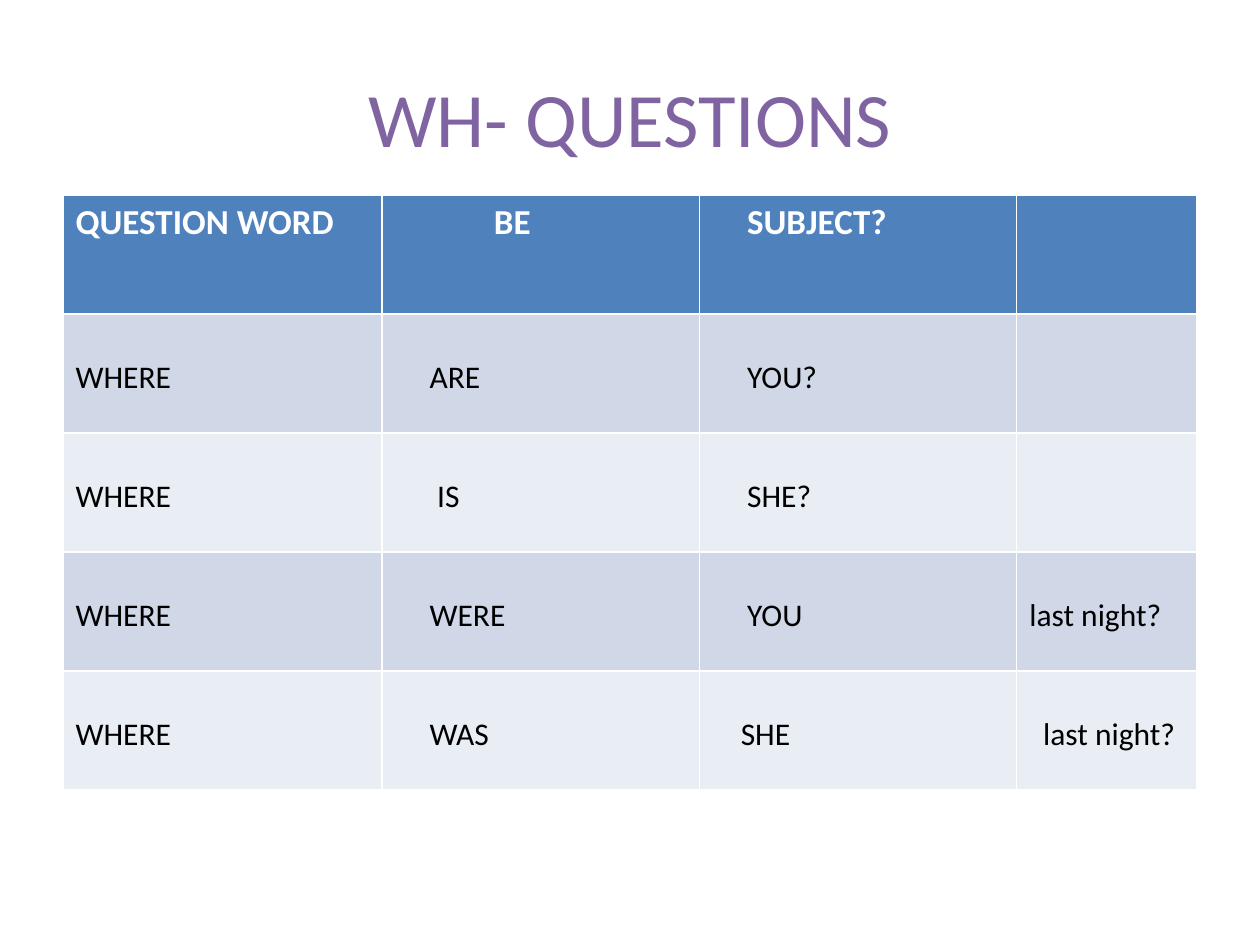
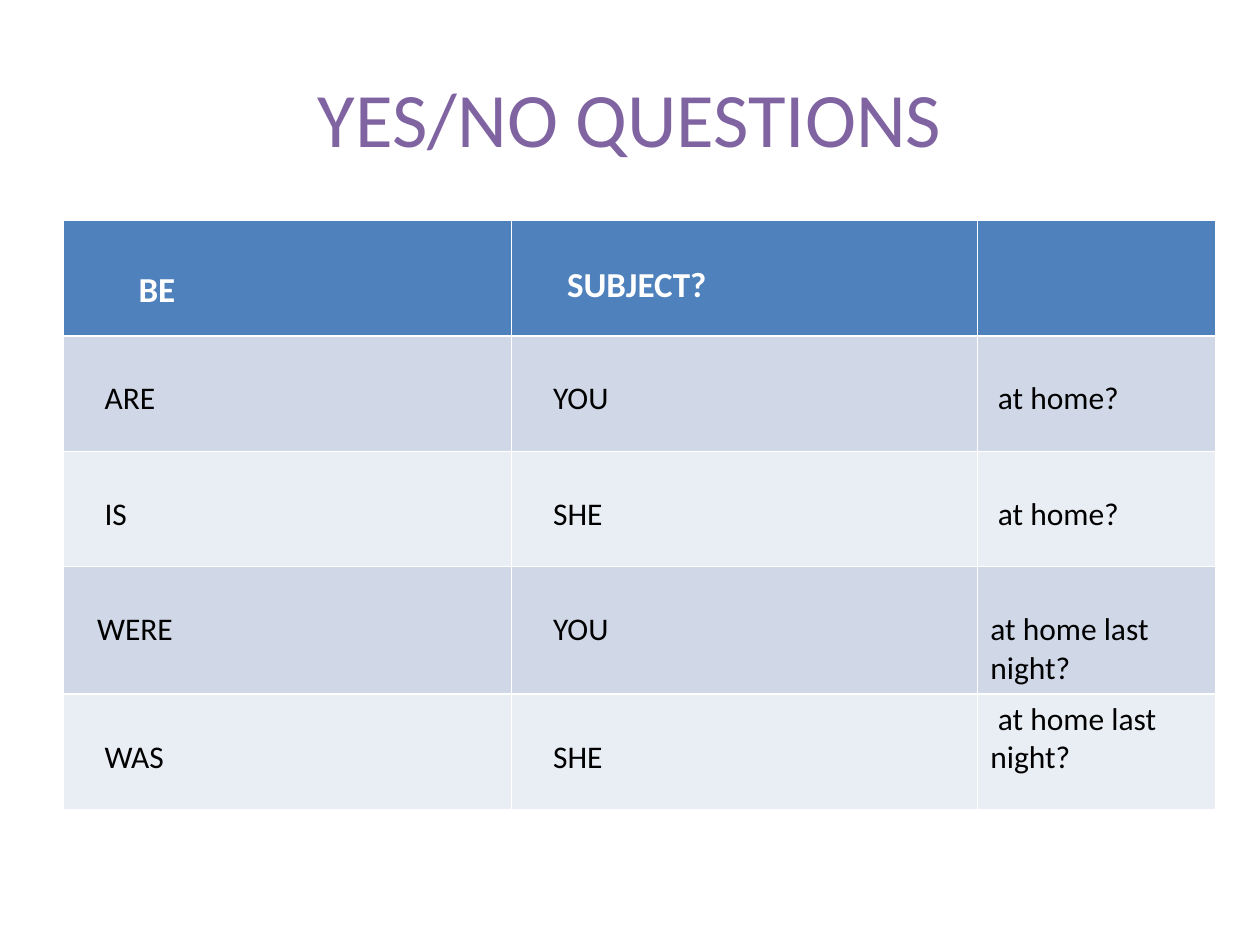
from dataclasses import dataclass

from pptx import Presentation
from pptx.dml.color import RGBColor
from pptx.enum import text
from pptx.util import Inches, Pt


@dataclass(frozen=True)
class Theme:
    font: str = "Calibri"
    title: RGBColor = RGBColor(0x80, 0x64, 0xA2)
    header_fill: RGBColor = RGBColor(0x4F, 0x81, 0xBD)
    header_text: RGBColor = RGBColor(0xFF, 0xFF, 0xFF)
    bands: tuple = (RGBColor(0xD0, 0xD8, 0xE8), RGBColor(0xE9, 0xED, 0xF4))
    body_text: RGBColor = RGBColor(0, 0, 0)
    title_size: Pt = Pt(44)
    header_size: Pt = Pt(20)
    body_size: Pt = Pt(18)


THEME = Theme()
LEFT = 0.5
CELL_TOP = 0.05
BODY_DROP = 0.3  # body text sits one line below the top of its cell

# Each cell is (wording, first-line indent, optional drop from the cell top).
EMPTY = ("", 0)
lessons = [
    {
        "title": "WH- QUESTIONS",
        "top": 1.55,
        "row_height": 4.72 / 5,
        "columns": (2.53, 2.52, 2.52, 1.43),
        "rows": [
            [("QUESTION WORD", 0), ("BE", 0.79), ("SUBJECT?", 0.28), EMPTY],
            [("WHERE", 0), ("ARE", 0.28), ("YOU?", 0.28), EMPTY],
            [("WHERE", 0), ("IS", 0.34), ("SHE?", 0.28), EMPTY],
            [("WHERE", 0), ("WERE", 0.28), ("YOU", 0.28), ("last night?", 0)],
            [("WHERE", 0), ("WAS", 0.28), ("SHE", 0.23), ("last night?", 0.11)],
        ],
    },
    {
        "title": "YES/NO QUESTIONS",
        "top": 1.75,
        "row_height": 4.58 / 5,
        "columns": (3.56, 3.7, 1.89),
        "rows": [
            [("BE", 0.5, 0.34), ("SUBJECT?", 0.34, 0.3), EMPTY],
            [("ARE", 0.23), ("YOU", 0.23), ("at home?", 0.06)],
            [("IS", 0.23), ("SHE", 0.23), ("at home?", 0.06)],
            [("WERE", 0.17), ("YOU", 0.23), ("at home last night?", 0)],
            [("WAS", 0.23), ("SHE", 0.23), ("at home last night?", 0.06, 0)],
        ],
    },
]


def style_font(font, size, color, bold=False):
    font.name = THEME.font
    font.size = size
    font.color.rgb = color
    font.bold = bold


def fill_cell(cell, is_header, fill, wording, indent, drop=None):
    if drop is None:
        drop = 0 if is_header else BODY_DROP
    cell.fill.solid()
    cell.fill.fore_color.rgb = fill
    cell.margin_top = Inches(CELL_TOP + drop)
    para = cell.text_frame.paragraphs[0]
    para.text = wording
    para._p.get_or_add_pPr().set("indent", str(Inches(indent)))
    if is_header:
        style_font(para.font, THEME.header_size, THEME.header_text, bold=True)
    else:
        style_font(para.font, THEME.body_size, THEME.body_text)


deck = Presentation()
deck.slide_width, deck.slide_height = Inches(10), Inches(7.5)
title_only = deck.slide_layouts[5]

for lesson in lessons:
    page = deck.slides.add_slide(title_only)

    title = page.shapes.title
    title.left, title.top = Inches(LEFT), Inches(0.3)
    title.width, title.height = Inches(9), Inches(1.25)
    title.text_frame.vertical_anchor = text.MSO_ANCHOR.MIDDLE
    heading = title.text_frame.paragraphs[0]
    heading.text = lesson["title"]
    heading.alignment = text.PP_ALIGN.CENTER
    style_font(heading.font, THEME.title_size, THEME.title)

    rows, columns = lesson["rows"], lesson["columns"]
    table = page.shapes.add_table(
        len(rows), len(columns), Inches(LEFT), Inches(lesson["top"]),
        Inches(sum(columns)), Inches(lesson["row_height"] * len(rows)),
    ).table
    for column, width in zip(table.columns, columns):
        column.width = Inches(width)

    for row_number, row in enumerate(rows):
        table.rows[row_number].height = Inches(lesson["row_height"])
        is_header = row_number == 0
        fill = THEME.header_fill if is_header else THEME.bands[(row_number - 1) % 2]
        for column_number, entry in enumerate(row):
            fill_cell(table.cell(row_number, column_number), is_header, fill, *entry)

deck.save("out.pptx")
